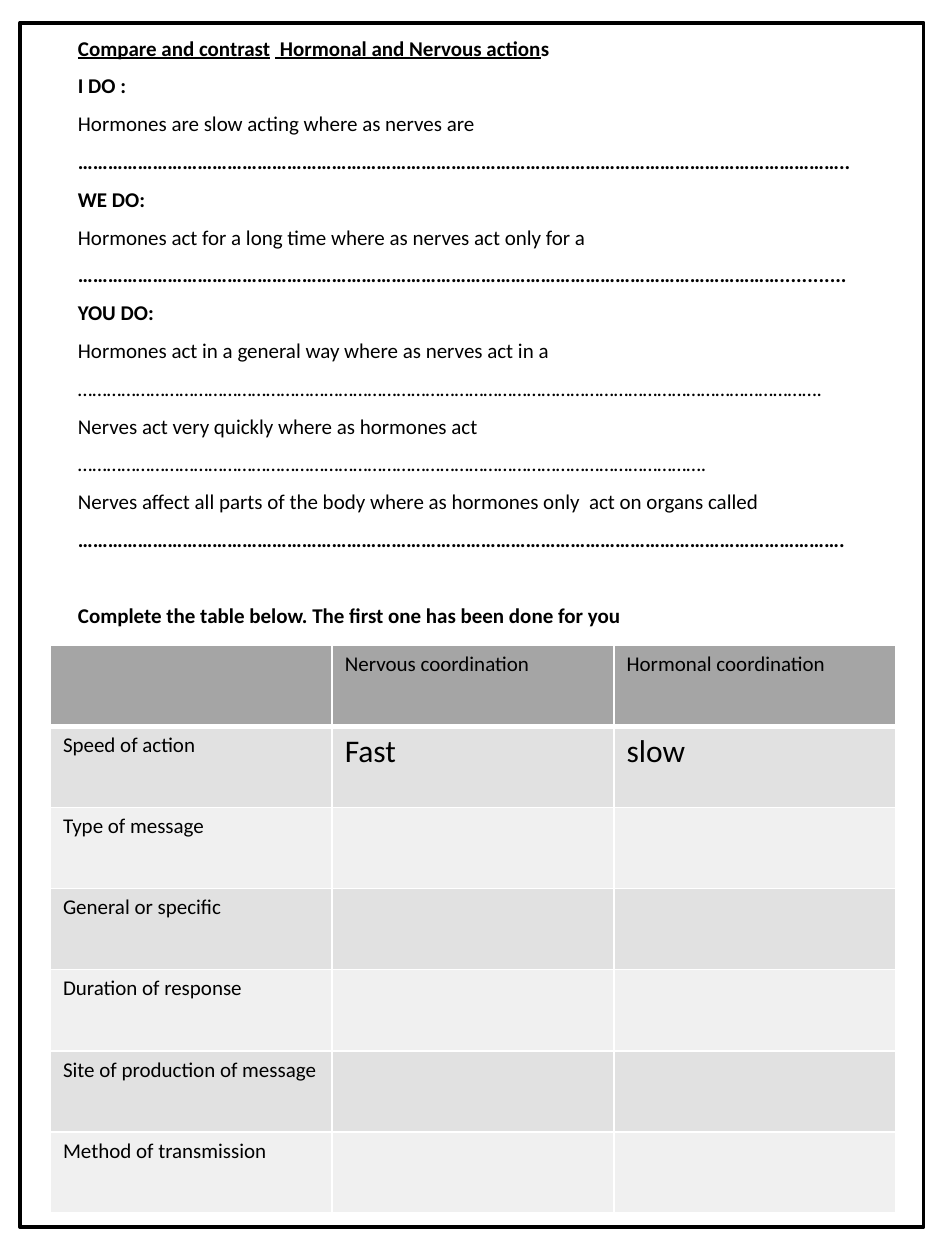
from lxml import etree
from pptx import Presentation
from pptx.dml.color import RGBColor
from pptx.enum.shapes import MSO_SHAPE
from pptx.enum.text import MSO_ANCHOR
from pptx.oxml.ns import qn
from pptx.util import Inches, Pt

BLACK = RGBColor(0x00, 0x00, 0x00)
WHITE = RGBColor(0xFF, 0xFF, 0xFF)
HEADER = RGBColor(0xA5, 0xA5, 0xA5)
BANDS = (RGBColor(0xE1, 0xE1, 0xE1), RGBColor(0xF0, 0xF0, 0xF0))
RECTANGLE = MSO_SHAPE.RECTANGLE
TOP = MSO_ANCHOR.TOP

LONG_DOTS = "………………………………………………………………………………………………………………………………………."

# Each paragraph is a list of (text, bold, underline)
TITLE = [
    ("Compare and contrast", True, True),
    (" ", True, False),
    (" Hormonal and Nervous action", True, True),
    ("s", True, False),
]
EXERCISES = [
    [("I DO :", True, False)],
    [("Hormones are slow acting where as nerves are", False, False),
     (" ………………………………………………………………………………………………………………………………………..", True, False)],
    [("WE DO:", True, False)],
    [("Hormones act for a long time where as nerves act only for a", False, False)],
    [("……………………………………………………………………………………………………………………………............", True, False)],
    [("YOU DO:", True, False)],
    [("Hormones act in a general way where as nerves act in a", False, False)],
    [(LONG_DOTS, False, False)],
    [("Nerves act very quickly where as hormones act", False, False)],
    [("………………………………………………………………………………………………………………….", False, False)],
    [("Nerves affect all parts of the body where as hormones only  act on organs called",
      False, False)],
    [(LONG_DOTS, True, False)],
]
TABLE_PROMPT = [("Complete the table below. The first one has been done for you", True, False)]

COMPARISON = [
    ("", "Nervous coordination", "Hormonal coordination"),
    ("Speed of action", "Fast", "slow"),
    ("Type of message", "", ""),
    ("General or specific", "", ""),
    ("Duration of response", "", ""),
    ("Site of production of message", "", ""),
    ("Method of transmission", "", ""),
]


class Worksheet:
    font = "Calibri"
    size = 12
    answer_size = 18

    def __init__(self, page):
        self.page = page

    def span(self, para, text, size, bold=False, underline=False):
        span = para.add_run()
        span.text = text
        span.font.name = self.font
        span.font.size = Pt(size)
        span.font.bold = bold
        span.font.underline = underline
        span.font.color.rgb = BLACK

    def text(self, left, top, width, height, paragraphs, last_gap):
        box = self.page.shapes.add_textbox(
            Inches(left), Inches(top), Inches(width), Inches(height))
        frame = box.text_frame
        frame.word_wrap = True
        frame.vertical_anchor = TOP
        for index, spans in enumerate(paragraphs):
            para = frame.add_paragraph() if index else frame.paragraphs[0]
            para.line_spacing = 1.5
            for text, bold, underline in spans:
                self.span(para, text, self.size, bold, underline)
        para.space_before = Pt(last_gap)

    def border(self, cell, side, width):
        line = etree.SubElement(cell._tc.get_or_add_tcPr(), qn(f"a:ln{side}"),
                                w=str(Pt(width)))
        fill = etree.SubElement(line, qn("a:solidFill"))
        etree.SubElement(fill, qn("a:srgbClr"), val=str(WHITE))

    def table(self, left, top, width, height, rows):
        table = self.page.shapes.add_table(
            len(rows), len(rows[0]), Inches(left), Inches(top),
            Inches(width), Inches(height)).table
        table.first_row = table.horz_banding = False
        for row, texts in enumerate(rows):
            for column, text in enumerate(texts):
                cell = table.cell(row, column)
                for side in "LRTB":
                    heavy = (row, side) in ((0, "B"), (1, "T"))
                    self.border(cell, side, 3 if heavy else 1)
                cell.fill.solid()
                cell.fill.fore_color.rgb = BANDS[(row - 1) % 2] if row else HEADER
                if text:
                    size = self.answer_size if row and column else self.size
                    self.span(cell.text_frame.paragraphs[0], text, size)

    def frame(self, left, top, width, height, weight):
        shape = self.page.shapes.add_shape(
            RECTANGLE, Inches(left), Inches(top), Inches(width), Inches(height))
        shape.shadow.inherit = False
        shape.fill.background()
        shape.line.color.rgb = BLACK
        shape.line.width = Pt(weight)


def main():
    deck = Presentation()
    deck.slide_width = Inches(7.5)
    deck.slide_height = Inches(10)
    sheet = Worksheet(deck.slides.add_slide(deck.slide_layouts[6]))

    # Sentence exercises
    sheet.text(0.52, 0.13, 6.79, 8.76, [TITLE, *EXERCISES, TABLE_PROMPT], last_gap=21.6)

    # Comparison table
    sheet.table(0.4, 5.12, 6.71, 4.51, COMPARISON)

    # Page border
    sheet.frame(0.16, 0.18, 7.17, 9.56, 2.25)

    deck.save("out.pptx")


if __name__ == "__main__":
    main()
